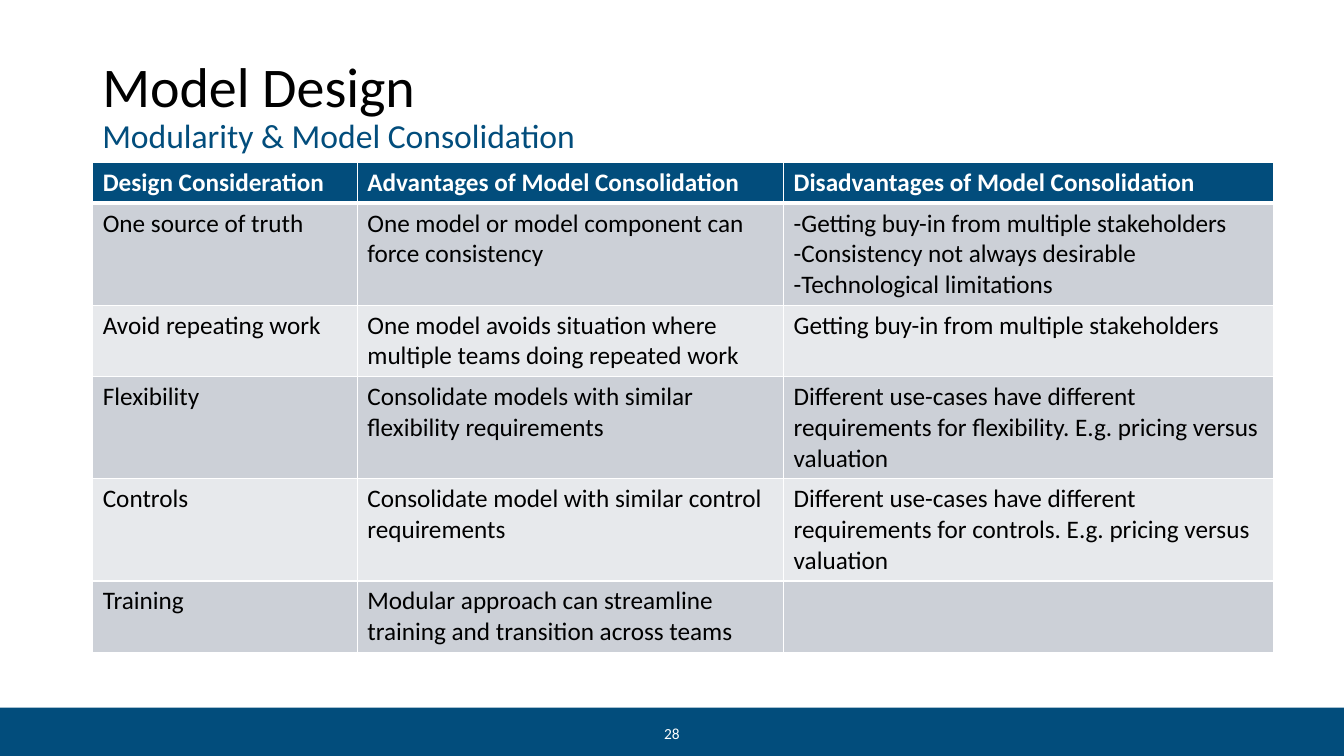
import pptx
import pptx.util
import pptx.dml.color
import pptx.enum.shapes
import pptx.enum.text
import pptx.oxml
import pptx.oxml.ns

Pt = pptx.util.Pt
ANCHOR = pptx.enum.text.MSO_ANCHOR
ALIGN = pptx.enum.text.PP_ALIGN
COLORS = {"navy": "024D7C", "white": "FFFFFF", "black": "000000",
          "dark": "CCD0D7", "light": "E7E9EC"}


def rgb(name):
    return pptx.dml.color.RGBColor.from_string(COLORS[name])


def add_run(para, text, size, color, bold=False):
    run = para.add_run()
    run.text = text
    run.font.name = "Calibri"
    run.font.size = Pt(size)
    run.font.bold = bold
    run.font.color.rgb = rgb(color)


deck = pptx.Presentation()
deck.slide_width, deck.slide_height = Pt(960), Pt(540)
slide = deck.slides.add_slide(deck.slide_layouts[6])
shapes = slide.shapes

# Footer bar
bar = shapes.add_shape(pptx.enum.shapes.MSO_SHAPE.RECTANGLE,
                       Pt(0), Pt(505.5), Pt(960), Pt(36.5))
bar.shadow.inherit = False
bar.fill.solid()
bar.fill.fore_color.rgb = rgb("navy")
bar.line.fill.background()

# Title and subtitle
title = shapes.add_textbox(Pt(66), Pt(26), Pt(828), Pt(101)).text_frame
title.word_wrap = True
title.vertical_anchor = ANCHOR.MIDDLE
para = title.paragraphs[0]
para.line_spacing = 0.9
add_run(para, "Model Design", 40, "black")
para.add_line_break()
add_run(para, "Modularity & Model Consolidation", 24, "navy")

# Page number
page = shapes.add_textbox(Pt(454.5), Pt(516), Pt(51), Pt(16)).text_frame
page.word_wrap = True
page.vertical_anchor = ANCHOR.MIDDLE
page.margin_top = page.margin_bottom = 0
page.paragraphs[0].alignment = ALIGN.CENTER
add_run(page.paragraphs[0], "28", 11, "white")

# Table content
rows = [
    ["Design Consideration", "Advantages of Model Consolidation",
     "Disadvantages of Model Consolidation"],
    ["One source of truth",
     "One model or model component can force consistency",
     "-Getting buy-in from multiple stakeholders\n"
     "-Consistency not always desirable\n"
     "-Technological limitations"],
    ["Avoid repeating work",
     "One model avoids situation where multiple teams doing repeated work",
     "Getting buy-in from multiple stakeholders"],
    ["Flexibility",
     "Consolidate models with similar flexibility requirements",
     "Different use-cases have different requirements for flexibility. "
     "E.g. pricing versus valuation"],
    ["Controls",
     "Consolidate model with similar control requirements",
     "Different use-cases have different requirements for controls. "
     "E.g. pricing versus valuation"],
    ["Training",
     "Modular approach can streamline training and transition across teams",
     ""],
]
widths = [189, 304.5, 350]
heights = [29, 73, 51, 73, 73, 51]

# Table grid
table = shapes.add_table(len(rows), len(widths), Pt(66.25), Pt(116),
                         Pt(sum(widths)), Pt(sum(heights))).table
for col, width in zip(table.columns, widths):
    col.width = Pt(width)
for row, height in zip(table.rows, heights):
    row.height = Pt(height)

# Table cells
for r, texts in enumerate(rows):
    head = r == 0
    fill = "navy" if head else ("dark" if r % 2 else "light")
    ink = "white" if head else "black"
    lines = {"L": 1, "R": 1, "T": 3 if r == 1 else 1, "B": 3 if head else 1}
    for c, text in enumerate(texts):
        cell = table.cell(r, c)
        props = cell._tc.get_or_add_tcPr()
        for side, width in lines.items():
            props.append(pptx.oxml.parse_xml(
                f'<a:ln{side} {pptx.oxml.ns.nsdecls("a")} w="{Pt(width)}">'
                f'<a:solidFill><a:srgbClr val="{COLORS["white"]}"/>'
                f'</a:solidFill></a:ln{side}>'))
        cell.fill.solid()
        cell.fill.fore_color.rgb = rgb(fill)
        frame = cell.text_frame
        for i, part in enumerate(text.split("\n") if text else []):
            para = frame.add_paragraph() if i else frame.paragraphs[0]
            add_run(para, part, 18, ink, head)

deck.save("out.pptx")
